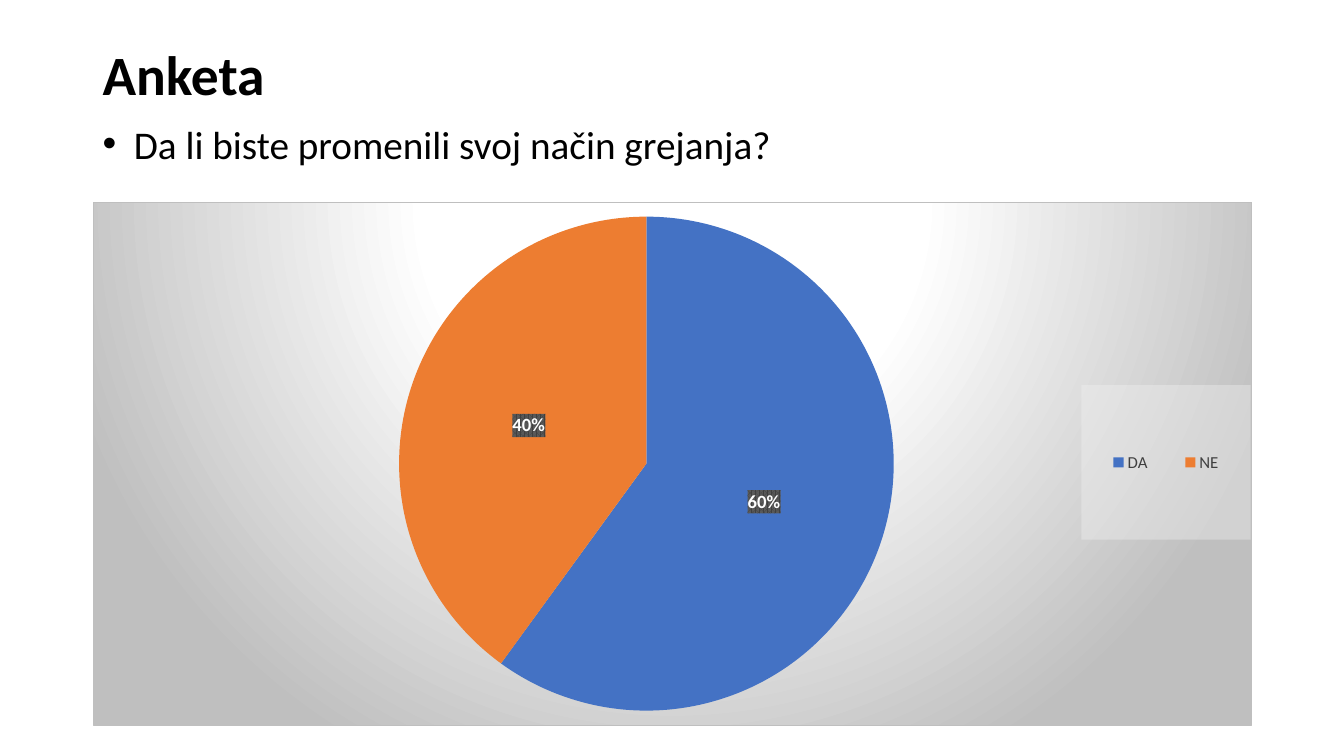
from dataclasses import dataclass

from lxml import etree
from pptx import Presentation
from pptx import util as u
from pptx.chart.data import CategoryChartData
from pptx.dml.color import RGBColor
from pptx.enum import chart as charts, text
from pptx.oxml import ns, parse_xml

FONT = "Calibri"
BLACK = "000000"
NAMESPACES = ns.nsdecls("a", "c")


@dataclass
class Line:
    words: str
    left: float
    top: float
    width: float
    height: float
    size: float
    bold: bool = False
    bullet: bool = False
    anchor: text.MSO_ANCHOR = text.MSO_ANCHOR.TOP


@dataclass
class Answer:
    name: str
    share: int
    color: str


LINES = [
    Line("Anketa", 0.92, 0.4, 11.5, 0.74, 39.6, bold=True, anchor=text.MSO_ANCHOR.MIDDLE),
    Line("Da li biste promenili svoj način grejanja?", 0.92, 1.14, 8.07, 0.57, 28, bullet=True),
]
ANSWERS = [Answer("DA", 60, "4472C4"), Answer("NE", 40, "ED7D31")]


def rgb(value: str) -> RGBColor:
    return RGBColor.from_string(value)


def style_font(font, size: float, color: str, bold: bool = False) -> None:
    font.name = FONT
    font.size = u.Pt(size)
    font.bold = bold
    font.color.rgb = rgb(color)


def shape_properties(content: str) -> etree._Element:
    return parse_xml(f"<c:spPr {NAMESPACES}>{content}</c:spPr>")


def manual_layout(left: float, top: float, width: float, height: float,
                  target: str = "") -> etree._Element:
    places = {"x": left, "y": top, "w": width, "h": height}
    modes = '<c:xMode val="edge"/><c:yMode val="edge"/>'
    values = "".join(f'<c:{key} val="{value}"/>' for key, value in places.items())
    return parse_xml(f"<c:layout {NAMESPACES}><c:manualLayout>{target}{modes}{values}"
                     "</c:manualLayout></c:layout>")


def remove_layout(parent: etree._Element) -> None:
    for layout in parent.findall(ns.qn("c:layout")):
        parent.remove(layout)


def add_line(page, line: Line) -> None:
    box = page.shapes.add_textbox(*map(u.Inches, (line.left, line.top, line.width, line.height)))
    frame = box.text_frame
    frame.word_wrap = True
    frame.vertical_anchor = line.anchor
    para = frame.paragraphs[0]
    para.text = line.words
    if line.bullet:
        properties = para._p.get_or_add_pPr()
        properties.set("marL", str(u.Inches(0.31)))
        properties.set("indent", str(-u.Inches(0.31)))
        etree.SubElement(properties, ns.qn("a:buFont")).set("typeface", "Arial")
        etree.SubElement(properties, ns.qn("a:buChar")).set("char", "•")
    else:
        para.line_spacing = 0.9
    style_font(para.font, line.size, BLACK, line.bold)


def style_labels(labels) -> None:
    labels.show_value = False
    labels.show_percentage = True
    labels.number_format = "0%"
    labels.number_format_is_linked = False
    labels.position = charts.XL_LABEL_POSITION.CENTER
    style_font(labels.font, 13.3, "FFFFFF", True)
    labels._element.find(ns.qn("c:txPr")).addprevious(shape_properties(
        '<a:pattFill prst="pct75"><a:fgClr><a:srgbClr val="404040"/></a:fgClr>'
        '<a:bgClr><a:srgbClr val="595959"/></a:bgClr></a:pattFill>'))


def style_legend(legend) -> None:
    legend.position = charts.XL_LEGEND_POSITION.RIGHT
    legend.include_in_layout = False
    style_font(legend.font, 12, "404040")
    element = legend._element
    remove_layout(element)
    element.find(ns.qn("c:legendPos")).addnext(manual_layout(0.853, 0.35, 0.146, 0.295))
    element.find(ns.qn("c:txPr")).addprevious(shape_properties(
        '<a:solidFill><a:srgbClr val="F2F2F2"><a:alpha val="39000"/></a:srgbClr></a:solidFill>'))


def style_chart_area(chart) -> None:
    stops = "".join(f'<a:gs pos="{position}000"><a:srgbClr val="{color}"/></a:gs>'
                    for position, color in ((0, "FFFFFF"), (39, "FFFFFF"), (100, "BFBFBF")))
    chart._chartSpace.find(ns.qn("c:chart")).addnext(shape_properties(
        f'<a:gradFill><a:gsLst>{stops}</a:gsLst><a:path path="circle">'
        '<a:fillToRect l="50000" t="-80000" r="50000" b="180000"/></a:path></a:gradFill>'
        f'<a:ln w="{u.Pt(0.75)}"><a:solidFill><a:srgbClr val="BFBFBF"/></a:solidFill></a:ln>'))


def add_survey_chart(page, answers: list[Answer]) -> None:
    data = CategoryChartData()
    data.categories = [answer.name for answer in answers]
    data.add_series("Series 1", [answer.share for answer in answers])
    chart = page.shapes.add_chart(charts.XL_CHART_TYPE.PIE,
                                  *map(u.Inches, (0.92, 2, 11.5, 5.2)), data).chart
    style_font(chart.font, 10, BLACK)
    chart.has_title = False
    chart.has_legend = True
    style_legend(chart.legend)
    style_chart_area(chart)
    plot = chart.plots[0]
    plot.vary_by_categories = True
    series = plot.series[0]
    for index, answer in enumerate(answers):
        wedge = series.points[index].format
        wedge.fill.solid()
        wedge.fill.fore_color.rgb = rgb(answer.color)
        wedge.line.fill.background()
    style_labels(series.data_labels)
    area = chart._chartSpace.chart.plotArea
    remove_layout(area)
    area.insert(0, manual_layout(0.264, 0.027, 0.427, 0.946,
                                 '<c:layoutTarget val="inner"/>'))


def main() -> None:
    deck = Presentation()
    deck.slide_width = u.Inches(13.33)
    deck.slide_height = u.Inches(7.5)
    page = deck.slides.add_slide(deck.slide_layouts[6])
    title, question = LINES
    add_line(page, title)
    add_survey_chart(page, ANSWERS)
    add_line(page, question)
    deck.save("out.pptx")


if __name__ == "__main__":
    main()
